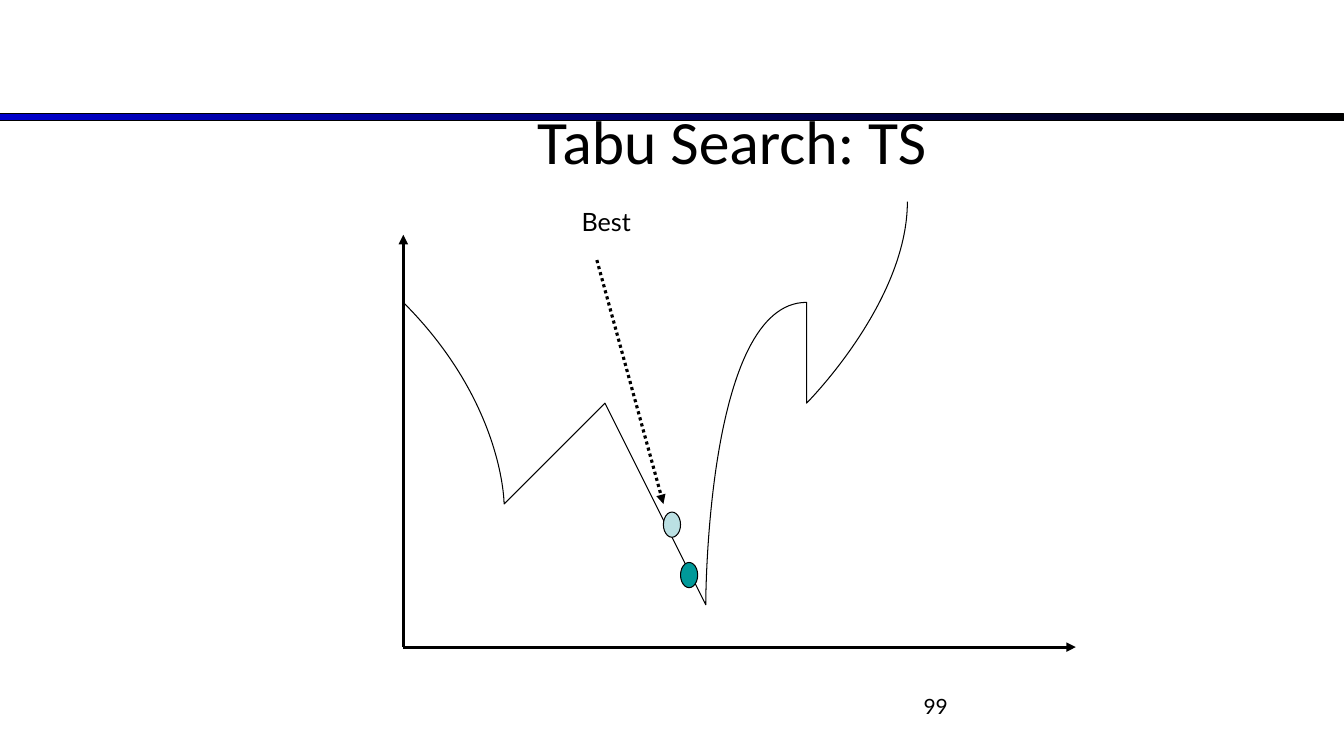
from pptx import Presentation
from pptx.dml.color import RGBColor
from pptx.enum.dml import MSO_LINE
from pptx.enum.shapes import MSO_CONNECTOR, MSO_SHAPE
from pptx.enum.text import MSO_ANCHOR, PP_ALIGN
from pptx.oxml.ns import qn
from pptx.util import Inches, Pt
from lxml.etree import SubElement

COLORS = {"ink": "000000", "bar": "0000CC", "current": "BBE0E3", "best": "009999"}
CURVE_START = (4.5, 2.92)
CURVE_SEGMENTS = [
    [(4.69, 3.83), (4.89, 4.75), (5.17, 4.92)],
    [(5.44, 5.08), (5.89, 3.76), (6.17, 3.92)],
    [(6.44, 4.07), (6.6, 5.99), (6.83, 5.83)],
    [(7.07, 5.68), (7.35, 3.31), (7.58, 3)],
    [(7.82, 2.69), (8, 4.12), (8.25, 4)],
    [(8.5, 3.88), (8.94, 2.54), (9.08, 2.25)],
]


def rgb(name):
    """Return the named colour."""
    return RGBColor.from_string(COLORS[name])


def set_line(sp, width):
    """Give a shape or connector a plain black line."""
    sp.line.color.rgb = rgb("ink")
    sp.line.width = Pt(width)


def set_text(sp, text, size, font, align):
    """Fill a text shape with one formatted paragraph."""
    tf = sp.text_frame
    tf.word_wrap = True
    p = tf.paragraphs[0]
    p.text = text
    p.alignment = align
    p.font.size = Pt(size)
    p.font.name = font
    p.font.color.rgb = rgb("ink")


def add_title(s, text, left, top, width, height):
    """Place and format the title placeholder."""
    sp = s.shapes.title
    sp.left, sp.top = Inches(left), Inches(top)
    sp.width, sp.height = Inches(width), Inches(height)
    set_text(sp, text, 44, "Calibri", PP_ALIGN.CENTER)
    sp.text_frame.vertical_anchor = MSO_ANCHOR.MIDDLE


def add_label(s, text, left, top, width, height, size, align=PP_ALIGN.LEFT):
    """Add a text box."""
    sp = s.shapes.add_textbox(Inches(left), Inches(top), Inches(width), Inches(height))
    set_text(sp, text, size, "Lato", align)


def add_bar(s, top, width, height):
    """Add the gradient bar behind the title."""
    sp = s.shapes.add_shape(MSO_SHAPE.RECTANGLE, 0, Inches(top), width, Inches(height))
    sp.shadow.inherit = False
    sp.fill.gradient()
    sp.fill.gradient_angle = 0
    for stop, name in zip(sp.fill.gradient_stops, ("bar", "ink")):
        stop.color.rgb = rgb(name)
    set_line(sp, 0.75)
    s.shapes.title._element.addprevious(sp._element)


def add_arrow(s, start, end, dash=None):
    """Add a straight arrow pointing at its end."""
    points = [Inches(v) for v in (*start, *end)]
    sp = s.shapes.add_connector(MSO_CONNECTOR.STRAIGHT, *points)
    set_line(sp, 2.25)
    if dash:
        sp.line.dash_style = dash
    SubElement(sp.line._get_or_add_ln(), qn("a:tailEnd"), type="triangle")
    SubElement(sp._element.spPr, qn("a:effectLst"))


def add_curve(s, start, segments):
    """Add an open outline of cubic Bezier segments."""
    builder = s.shapes.build_freeform(*start, scale=Inches(1))
    builder.add_line_segments([pt for seg in segments for pt in seg], close=False)
    sp = builder.convert_to_shape()
    sp.shadow.inherit = False
    sp.fill.background()
    set_line(sp, 0.75)
    outline = sp._element.find(".//" + qn("a:path"))
    steps = outline.findall(qn("a:lnTo"))
    for i in range(0, len(steps), 3):
        bezier = SubElement(outline, qn("a:cubicBezTo"))
        for step in steps[i:i + 3]:
            bezier.append(step[0])
            outline.remove(step)


def add_solution(s, left, top, color):
    """Add an oval marking a solution."""
    sp = s.shapes.add_shape(
        MSO_SHAPE.OVAL, Inches(left), Inches(top), Inches(0.17), Inches(0.25))
    sp.shadow.inherit = False
    sp.fill.solid()
    sp.fill.fore_color.rgb = rgb(color)
    set_line(sp, 0.75)


def main():
    """Build the slide and save it."""
    prs = Presentation()
    prs.slide_width, prs.slide_height = Inches(13.33), Inches(7.5)
    s = prs.slides.add_slide(prs.slide_layouts[5])
    add_bar(s, 1.13, prs.slide_width, 0.07)
    add_title(s, "Tabu Search: TS", 3, 0.94, 8.52, 0.9)
    add_label(s, "99", 7.17, 6.83, 2.33, 0.52, 15, PP_ALIGN.RIGHT)
    origin = (4, 6.42)
    add_arrow(s, origin, (4, 2.33))
    add_arrow(s, origin, (10.67, 6.42))
    add_curve(s, CURVE_START, CURVE_SEGMENTS)
    add_solution(s, 6.58, 5.08, "current")
    add_label(s, "Best", 5.67, 2, 1.17, 0.4, 18)
    add_arrow(s, (5.92, 2.58), (6.58, 5), MSO_LINE.ROUND_DOT)
    add_solution(s, 6.75, 5.58, "best")
    prs.save("out.pptx")


if __name__ == "__main__":
    main()
